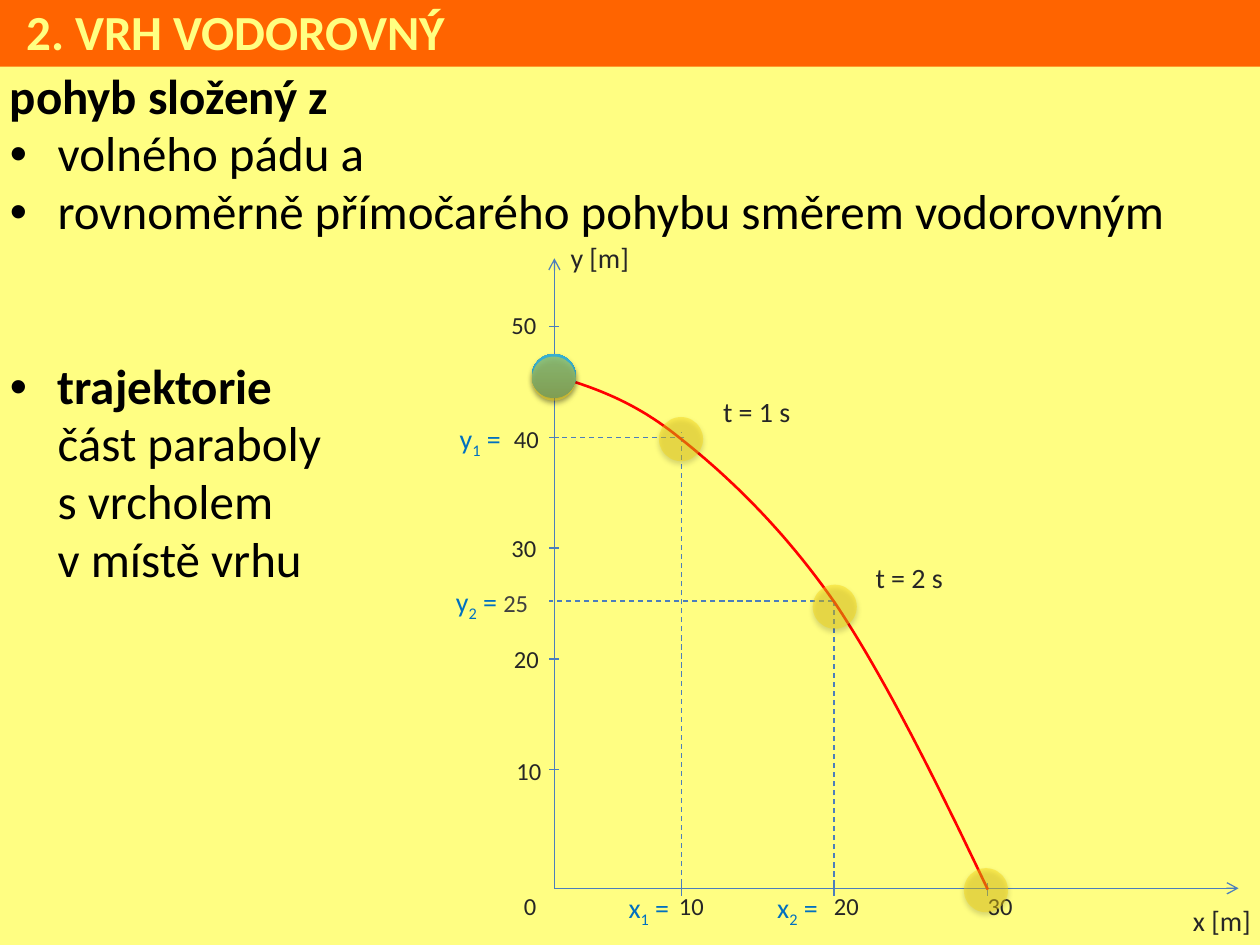
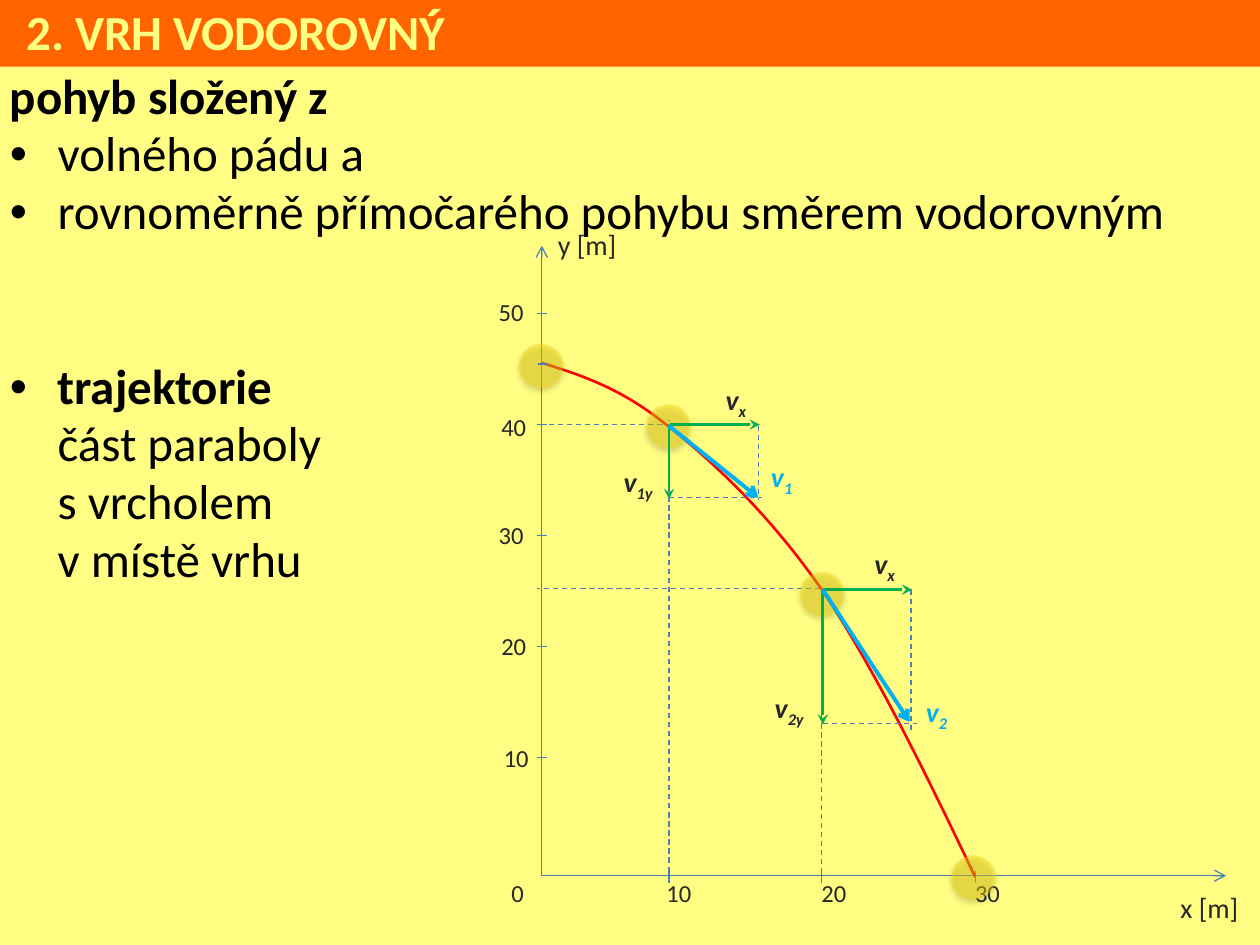
import pptx
import pptx.dml.color
import pptx.enum.dml
import pptx.enum.shapes
import pptx.enum.text
import pptx.oxml
import pptx.oxml.ns
import pptx.util
from typing import NamedTuple

# Shared look; lengths are in px, 100 px to the inch
EMU_PER_PX = 9144
FONT = "Calibri"
PAGE, BAND, BAND_TEXT = "FFFE82", "FF6400", "FFFF82"
BLACK, INK, GREY, BLUE = "000000", "262626", "404040", "0070C0"
AXIS, CURVE, BALL = "4B7EBC", "FF0000", "F7D611"
COMPONENT, VELOCITY = "00B050", "00B0F0"
BALL_SIZE = 35
DRAWING_NS = pptx.oxml.ns.nsdecls("a")
SHADOW = (f'<a:effectLst {DRAWING_NS}><a:outerShdw blurRad="39370" dist="22860" '
          'dir="5400000" rotWithShape="0"><a:srgbClr val="000000">'
          '<a:alpha val="35000"/></a:srgbClr></a:outerShdw></a:effectLst>')


class Run(NamedTuple):
    text: str
    color: str = INK
    size: int = 16
    strong: bool = False
    subscript: bool = False


class Label(NamedTuple):
    left: int
    top: int
    width: int
    runs: tuple[Run, ...]


class Segment(NamedTuple):
    x1: int
    y1: int
    x2: int
    y2: int
    color: str = AXIS
    width: float = 0.75
    arrow: str = ""
    dashed: bool = False


class Origin(NamedTuple):
    x: int
    y: int


def px(value: float) -> int:
    return round(value * EMU_PER_PX)


def rgb(value: str) -> pptx.dml.color.RGBColor:
    return pptx.dml.color.RGBColor.from_string(value)


def set_values(target, values: dict) -> None:
    for name, value in values.items():
        setattr(target, name, value)


def add_run(paragraph, text: str, color: str, size: int, **values) -> None:
    run = paragraph.add_run()
    run.text = text
    set_values(run.font, {"name": FONT, "size": pptx.util.Pt(size), **values})
    run.font.color.rgb = rgb(color)
    return run


def append_xml(parent, xml: str) -> None:
    parent.append(pptx.oxml.parse_xml(xml))


# Labels of the graph, placed from its origin with y pointing down
def number(text: str, left: int, top: int, width: int = 42) -> Label:
    return Label(left, top, width, (Run(text, size=14),))


def plain(text: str, left: int, top: int, width: int) -> Label:
    return Label(left, top, width, (Run(text),))


def coordinate(letter: str, index: str, left: int, top: int) -> Label:
    return Label(left, top, 59, (Run(letter, BLUE), Run(index, BLUE, subscript=True),
                                 Run(" =", BLUE)))


def vector_name(index: str, left: int, top: int, width: int = 41,
                color: str = INK) -> Label:
    return Label(left, top, width, (Run("v", color, strong=True),
                                    Run(index, color, strong=True, subscript=True)))


def component(x1: int, y1: int, x2: int, y2: int) -> Segment:
    return Segment(x1, y1, x2, y2, COMPONENT, 1.5, "stealth")


def velocity(x1: int, y1: int, x2: int, y2: int) -> Segment:
    return Segment(x1, y1, x2, y2, VELOCITY, 2.25, "arrow")


def guide(x1: int, y1: int, x2: int, y2: int) -> Segment:
    return Segment(x1, y1, x2, y2, dashed=True)


# Parts that both graphs share
AXES = [Segment(0, 0, 0, -500, arrow="arrow"), Segment(0, 0, 543, 0, arrow="arrow")]
TICKS = ([Segment(-4, -6 - 88 * step, 4, -6 - 88 * step) for step in range(1, 6)]
         + [Segment(x, -4, x, 6) for x in (101, 222, 344)])
GUIDES = [guide(101, 4, 101, -362), guide(222, 5, 222, -231),
          guide(221, -228, -4, -228), guide(103, -358, 4, -358)]
GRAPH_LABELS = [
    plain("y [m]", 3, -519, 70), plain("x [m]", 497, 7, 70),
    number("0", -34, -3, 31),
    number("10", 89, -3), number("20", 212, -3), number("30", 334, -3),
    number("10", -40, -110), number("20", -42, -199), number("30", -44, -287),
    number("40", -42, -373), number("50", -44, -464),
]
TRAJECTORY = [(0, -407), (32, -397), (63, -387), (100, -357), (138, -327),
              (182, -285), (223, -226), (263, -166), (304, -83), (344, 1)]
BALLS = [(-18, -422), (83, -374), (205, -241), (325, -16)]

# Parts of the single slides
POSITION_LABELS = [
    plain("t = 1 s", 124, -397, 82), plain("t = 2 s", 245, -265, 82),
    coordinate("x", "1", 49, -3), coordinate("x", "2", 167, -3),
    coordinate("y", "1", -85, -375),
    Label(-88, -246, 90, (Run("y", BLUE), Run("2", BLUE, subscript=True),
                          Run(" = ", BLUE), Run("25", GREY, 14))),
]
VELOCITY_LINES = [
    Segment(-3, -406, 5, -406),
    component(101, -358, 101, -299), component(102, -358, 173, -358),
    guide(172, -357, 172, -298), guide(101, -300, 175, -300),
    velocity(101, -357, 172, -300),
    component(223, -227, 223, -120), component(223, -227, 294, -227),
    guide(293, -227, 293, -113), guide(223, -121, 298, -121),
    velocity(223, -227, 292, -122),
]
VELOCITY_LABELS = [
    vector_name("1y", 55, -331, 49), vector_name("x", 136, -396),
    vector_name("1", 172, -335, color=VELOCITY),
    vector_name("2y", 175, -152, 49), vector_name("x", 254, -266),
    vector_name("2", 295, -149, color=VELOCITY),
]


def add_segment(slide, origin: Origin, segment: Segment) -> None:
    connector = slide.shapes.add_connector(
        pptx.enum.shapes.MSO_CONNECTOR.STRAIGHT,
        px(origin.x + segment.x1), px(origin.y + segment.y1),
        px(origin.x + segment.x2), px(origin.y + segment.y2))
    line = connector.line
    line.color.rgb = rgb(segment.color)
    line.width = pptx.util.Pt(segment.width)
    if segment.dashed:
        line.dash_style = pptx.enum.dml.MSO_LINE.DASH
    properties = connector._element.spPr
    if segment.arrow:
        append_xml(properties.find(pptx.oxml.ns.qn("a:ln")),
                   f'<a:tailEnd {DRAWING_NS} type="{segment.arrow}"/>')
    append_xml(properties, f"<a:effectLst {DRAWING_NS}/>")


def add_label(slide, origin: Origin, label: Label) -> None:
    height = 34 if label.runs[0].size == 14 else 37
    box = slide.shapes.add_textbox(px(origin.x + label.left), px(origin.y + label.top),
                                   px(label.width), px(height))
    set_values(box.text_frame, {
        "word_wrap": False,
        "auto_size": pptx.enum.text.MSO_AUTO_SIZE.SHAPE_TO_FIT_TEXT})
    for part in label.runs:
        run = add_run(box.text_frame.paragraphs[0], part.text, part.color, part.size,
                      bold=part.strong, italic=part.strong)
        if part.subscript:
            run._r.get_or_add_rPr().set("baseline", "-25000")


def add_ball(slide, origin: Origin, left: int, top: int):
    ball = slide.shapes.add_shape(
        pptx.enum.shapes.MSO_SHAPE.OVAL, px(origin.x + left), px(origin.y + top),
        px(BALL_SIZE), px(BALL_SIZE))
    ball.line.fill.background()
    ball.fill.solid()
    ball.fill.fore_color.rgb = rgb(BALL)
    append_xml(ball._element.spPr, SHADOW)
    return ball


def add_balls(slide, origin: Origin) -> None:
    for left, top in BALLS:
        ball = add_ball(slide, origin, left, top)
        color = ball._element.spPr.find(
            pptx.oxml.ns.qn("a:solidFill")).find(pptx.oxml.ns.qn("a:srgbClr"))
        append_xml(color, f'<a:alpha {DRAWING_NS} val="44000"/>')


def add_thrown_ball(slide, origin: Origin) -> None:
    fill = add_ball(slide, origin, -18, -424).fill
    fill.gradient()
    fill.gradient_angle = 90
    for stop, color, position in zip(fill.gradient_stops, ("2A88A2", "37B1D2"), (0, 0.8)):
        stop.color.rgb = rgb(color)
        stop.position = position


def curve_points(steps: int = 24) -> list[tuple[float, float]]:
    """Follow the chained cubic curves of the trajectory."""
    points = [TRAJECTORY[0]]
    for first in range(0, len(TRAJECTORY) - 1, 3):
        controls = TRAJECTORY[first:first + 4]
        for step in range(1, steps + 1):
            t = step / steps
            weights = ((1 - t) ** 3, 3 * t * (1 - t) ** 2, 3 * t * t * (1 - t), t ** 3)
            points.append(tuple(sum(weight * point[axis] for weight, point
                                    in zip(weights, controls)) for axis in (0, 1)))
    return points


def add_trajectory(slide, origin: Origin) -> None:
    points = [(px(origin.x + x), px(origin.y + y)) for x, y in curve_points()]
    builder = slide.shapes.build_freeform(*points[0])
    builder.add_line_segments(points[1:], close=False)
    curve = builder.convert_to_shape()
    curve.shadow.inherit = False
    curve.fill.background()
    curve.line.color.rgb = rgb(CURVE)
    curve.line.width = pptx.util.Pt(1.5)


def add_graph(slide, origin: Origin) -> None:
    for segment in AXES + TICKS + GUIDES:
        add_segment(slide, origin, segment)
    for label in GRAPH_LABELS:
        add_label(slide, origin, label)
    add_trajectory(slide, origin)


def add_title(slide) -> None:
    title = slide.shapes.title
    set_values(title, {"left": 0, "top": px(-4), "width": px(1000), "height": px(57)})
    title.fill.solid()
    title.fill.fore_color.rgb = rgb(BAND)
    set_values(title.text_frame, {
        "word_wrap": True, "auto_size": pptx.enum.text.MSO_AUTO_SIZE.NONE,
        "vertical_anchor": pptx.enum.text.MSO_ANCHOR.MIDDLE})
    paragraph = title.text_frame.paragraphs[0]
    paragraph.alignment = pptx.enum.text.PP_ALIGN.LEFT
    paragraph._p.get_or_add_pPr().set("marL", str(px(11)))
    add_run(paragraph, "2. VRH VODOROVNÝ", BAND_TEXT, 28, bold=True)


def add_body(slide) -> None:
    frame = slide.shapes.add_textbox(px(-2), px(49), px(1000), px(636)).text_frame
    frame.word_wrap = True
    heading = frame.paragraphs[0]
    add_run(heading, "pohyb složený z", BLACK, 28, bold=True)
    bullets = [frame.add_paragraph() for _ in range(3)]
    for paragraph in bullets:
        properties = paragraph._p.get_or_add_pPr()
        properties.set("marL", str(px(38)))
        properties.set("indent", str(px(-38)))
    add_run(bullets[0], "volného pádu a", BLACK, 28)
    add_run(bullets[1], "rovnoměrně přímočarého pohybu směrem vodorovným", BLACK, 28)
    add_run(bullets[2], "trajektorie ", BLACK, 28, bold=True)
    for text in ("část paraboly ", "s vrcholem ", "v místě vrhu"):
        bullets[2].add_line_break()
        add_run(bullets[2], text, BLACK, 28)
    for paragraph in frame.paragraphs:
        paragraph.line_spacing = 0.98
    bullets[2].space_before = pptx.util.Pt(67)
    for paragraph in bullets:
        properties = paragraph._p.get_or_add_pPr()
        append_xml(properties, f'<a:buFont {DRAWING_NS} typeface="Arial"/>')
        append_xml(properties, f'<a:buChar {DRAWING_NS} char="•"/>')


def start_slide(presentation, origin: Origin):
    slide = presentation.slides.add_slide(presentation.slide_layouts[5])
    add_title(slide)
    add_body(slide)
    add_graph(slide, origin)
    return slide


def main() -> None:
    presentation = pptx.Presentation()
    set_values(presentation, {"slide_width": px(1000), "slide_height": px(750)})
    background = presentation.slide_master.background.fill
    background.solid()
    background.fore_color.rgb = rgb(PAGE)

    # Slide 1: positions after one and two seconds
    origin = Origin(440, 705)
    slide = start_slide(presentation, origin)
    add_thrown_ball(slide, origin)
    add_balls(slide, origin)
    for label in POSITION_LABELS:
        add_label(slide, origin, label)

    # Slide 2: velocities and their components
    origin = Origin(430, 695)
    slide = start_slide(presentation, origin)
    add_balls(slide, origin)
    for segment in VELOCITY_LINES:
        add_segment(slide, origin, segment)
    for label in VELOCITY_LABELS:
        add_label(slide, origin, label)

    presentation.save("out.pptx")


if __name__ == "__main__":
    main()
